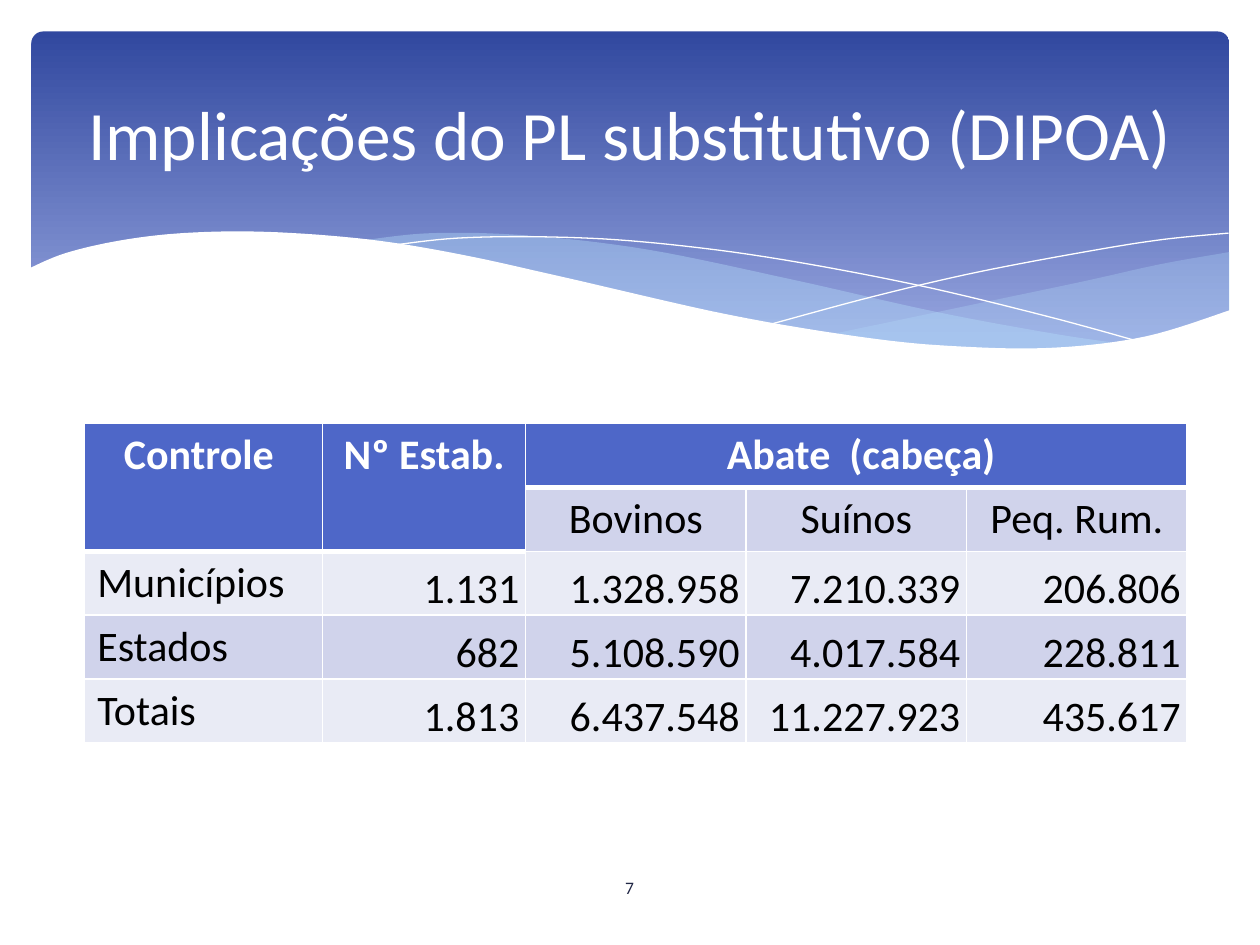
"""Build the slide on the effects of the substitute bill, with a wave banner and a slaughter table."""
from dataclasses import dataclass
from typing import Optional

from lxml import etree
from pptx import Presentation
from pptx.dml.color import RGBColor
from pptx.enum.shapes import MSO_SHAPE
from pptx.enum.text import MSO_ANCHOR, PP_ALIGN
from pptx.oxml.ns import qn
from pptx.util import Pt

ROUNDED = MSO_SHAPE.ROUNDED_RECTANGLE
TOP, MIDDLE, BOTTOM = MSO_ANCHOR.TOP, MSO_ANCHOR.MIDDLE, MSO_ANCHOR.BOTTOM
LEFT, CENTER, RIGHT = PP_ALIGN.LEFT, PP_ALIGN.CENTER, PP_ALIGN.RIGHT

FONT = "Calibri"
WHITE = RGBColor(0xFF, 0xFF, 0xFF)
BLACK = RGBColor(0x00, 0x00, 0x00)
NAVY = RGBColor(0x21, 0x27, 0x45)
BANNER_TOP = RGBColor(0x31, 0x48, 0x9F)
BANNER_BOTTOM = RGBColor(0x95, 0xA4, 0xDE)
SKY = RGBColor(0xB4, 0xDC, 0xFA)
HEADER_BLUE = RGBColor(0x4E, 0x67, 0xC8)
BAND_DARK = RGBColor(0xD0, 0xD3, 0xEB)
BAND_LIGHT = RGBColor(0xE9, 0xEB, 0xF5)

Point = tuple[float, float]


@dataclass(frozen=True)
class Wave:
    """Smooth edges joined in order; filled when it has an opacity, else a hairline."""
    edges: list[list[Point]]
    color: RGBColor
    opacity: Optional[int] = None


WAVES = [
    Wave([[(702.7, 144), (663, 151), (620, 160.6), (561, 173), (476, 190.8)],
          [(476, 190.8), (527, 197.2), (570, 199.5), (608, 199.4), (646, 195.8),
           (678, 188.6), (702.7, 177.8)]], SKY, 29),
    Wave([[(643, 196.6), (603, 190.8), (534, 178), (453, 159.8), (370, 142.6),
           (302, 134.6), (247, 133.2), (206, 137.5)],
          [(206, 137.5), (261, 146.2), (323.3, 159.8), (381.6, 172.8), (444, 185.8),
           (510, 196), (565, 200), (610, 199.8), (643, 196.6)]], SKY, 40),
    Wave([[(222.5, 140.4), (261.4, 136.1), (311.8, 135.4), (367, 138.2), (438, 146.9),
           (523, 162.7), (598, 180.7), (653, 195.8)]], WHITE),
    Wave([[(441.4, 185), (500, 169.2), (558.7, 155.5), (623.5, 143.3), (665, 136.8),
           (702, 133.2)]], WHITE),
    Wave([[(703.4, 177.1), (655, 192.2), (602.6, 198.7), (548, 198), (495, 193),
           (417, 180), (322, 158.4), (263, 145.4), (210, 136.8), (152, 132.5),
           (105, 133.2), (68.4, 137.5), (37.4, 144.7), (16.6, 153.4)],
          [(16.6, 236.9), (703.4, 236.9)]], WHITE, 100),
]

COLUMN_WIDTHS = [136, 116, 126, 126, 126]
HEADER_DEPTHS = [2, 2, 1, 1, 1]
ROW_HEIGHT = 36
ROWS = [
    ["Controle ", "Nº Estab.", " Abate  (cabeça)", "", ""],
    ["", "", "Bovinos", "Suínos", "Peq. Rum."],
    ["Municípios", "1.131", "1.328.958", "7.210.339", "206.806"],
    ["Estados", "682", "5.108.590", "4.017.584", "228.811"],
    ["Totais", "1.813", "6.437.548", "11.227.923", "435.617"],
]


def smooth(knots: list[Point], steps: int = 8) -> list[Point]:
    """Sample a Catmull-Rom curve through the knots."""
    padded = [knots[0], *knots, knots[-1]]
    curve = [knots[0]]
    for a, b, c, d in zip(padded, padded[1:], padded[2:], padded[3:]):
        for step in range(1, steps + 1):
            t = step / steps
            x, y = (
                q + t / 2 * (r - p + t * (2 * p - 5 * q + 4 * r - s + t * (3 * (q - r) + s - p)))
                for p, q, r, s in zip(a, b, c, d)
            )
            curve.append((x, y))
    return curve


def write(frame, text: str, size: float, color: RGBColor, align, bold: bool = False) -> None:
    """Put one formatted run into a text frame."""
    paragraph = frame.paragraphs[0]
    paragraph.alignment = align
    run = paragraph.add_run()
    run.text = text
    run.font.name = FONT
    run.font.size = Pt(size)
    run.font.bold = bold
    run.font.color.rgb = color


def draw_banner(slide) -> None:
    """Draw the rounded gradient behind the title."""
    banner = slide.shapes.add_shape(ROUNDED, Pt(18), Pt(18), Pt(684.5), Pt(194.4))
    banner.adjustments[0] = 0.034
    banner.shadow.inherit = False
    banner.line.fill.background()
    banner.fill.gradient()
    banner.fill.gradient_angle = 270
    stops = zip(banner.fill.gradient_stops, (BANNER_TOP, BANNER_BOTTOM), (0, 0.9))
    for stop, color, position in stops:
        stop.color.rgb = color
        stop.position = position


def draw_wave(slide, wave: Wave) -> None:
    """Draw a wave as a filled area or a thin line."""
    filled = wave.opacity is not None
    outline = [(Pt(x), Pt(y)) for edge in wave.edges for x, y in smooth(edge)]
    builder = slide.shapes.build_freeform(*outline[0], scale=1.0)
    builder.add_line_segments(outline[1:], close=filled)
    shape = builder.convert_to_shape()
    shape.shadow.inherit = False
    if filled:
        shape.fill.solid()
        shape.fill.fore_color.rgb = wave.color
        shape.line.fill.background()
        color = shape.element.spPr.find(qn("a:solidFill"))[0]
        etree.SubElement(color, qn("a:alpha"), val=str(wave.opacity * 1000))
    else:
        shape.fill.background()
        shape.line.color.rgb = wave.color
        shape.line.width = Pt(0)


def set_borders(cell, top: float, bottom: float) -> None:
    """Give a cell white borders, with its own top and bottom widths."""
    properties = cell._tc.get_or_add_tcPr()
    widths = {"a:lnL": 1, "a:lnR": 1, "a:lnT": top, "a:lnB": bottom}
    for index, (tag, width) in enumerate(widths.items()):
        border = etree.Element(qn(tag), w=str(Pt(width)))
        fill = etree.SubElement(border, qn("a:solidFill"))
        etree.SubElement(fill, qn("a:srgbClr"), val=str(WHITE))
        properties.insert(index, border)


def format_cell(cell, text: str, row: int, column: int) -> None:
    """Fill, border and write one cell according to its place."""
    depth = HEADER_DEPTHS[column]
    header = row < depth
    band = BAND_DARK if row % 2 else BAND_LIGHT
    figure = row > 1 and column > 0
    cell.fill.solid()
    cell.fill.fore_color.rgb = HEADER_BLUE if header else band
    set_borders(cell, 3 if row == depth else 1, 3 if header else 1)
    cell.vertical_anchor = BOTTOM if figure else TOP
    if figure:
        cell.margin_left = cell.margin_right = Pt(3.6)
        cell.margin_top = cell.margin_bottom = Pt(0)
    if text:
        align = CENTER if row < 2 else RIGHT if figure else LEFT
        write(cell.text_frame, text, 24, WHITE if header else BLACK, align, header)


def draw_table(slide) -> None:
    """Draw the table of establishments and slaughter."""
    frame = slide.shapes.add_table(
        len(ROWS), len(COLUMN_WIDTHS), Pt(48.4), Pt(242),
        Pt(sum(COLUMN_WIDTHS)), Pt(ROW_HEIGHT * len(ROWS)))
    table = frame.table
    table.first_row = table.horz_banding = False
    for column, width in zip(table.columns, COLUMN_WIDTHS):
        column.width = Pt(width)
    for row, texts in enumerate(ROWS):
        table.rows[row].height = Pt(ROW_HEIGHT)
        for column, text in enumerate(texts):
            format_cell(table.cell(row, column), text, row, column)
    for first, last in (((0, 0), (1, 0)), ((0, 1), (1, 1)), ((0, 2), (0, 4))):
        table.cell(*first).merge(table.cell(*last))


def place_title(slide) -> None:
    """Move the title onto the banner and write it."""
    title = slide.shapes.title
    title.left, title.top, title.width, title.height = Pt(36), Pt(26.6), Pt(648), Pt(98.6)
    title.text_frame.vertical_anchor = MIDDLE
    write(title.text_frame, "Implicações do PL substitutivo (DIPOA)", 39.6, WHITE, CENTER)
    title.element.getparent().append(title.element)


def main() -> None:
    """Assemble and save the slide."""
    deck = Presentation()
    deck.slide_width, deck.slide_height = Pt(720), Pt(540)
    slide = deck.slides.add_slide(deck.slide_layouts[5])
    draw_banner(slide)
    for wave in WAVES:
        draw_wave(slide, wave)
    place_title(slide)
    draw_table(slide)
    page_number = slide.shapes.add_textbox(Pt(314), Pt(492.5), Pt(91.5), Pt(28.8)).text_frame
    page_number.word_wrap = True
    page_number.vertical_anchor = MIDDLE
    write(page_number, "7", 10, NAVY, CENTER)
    deck.save("out.pptx")


if __name__ == "__main__":
    main()
